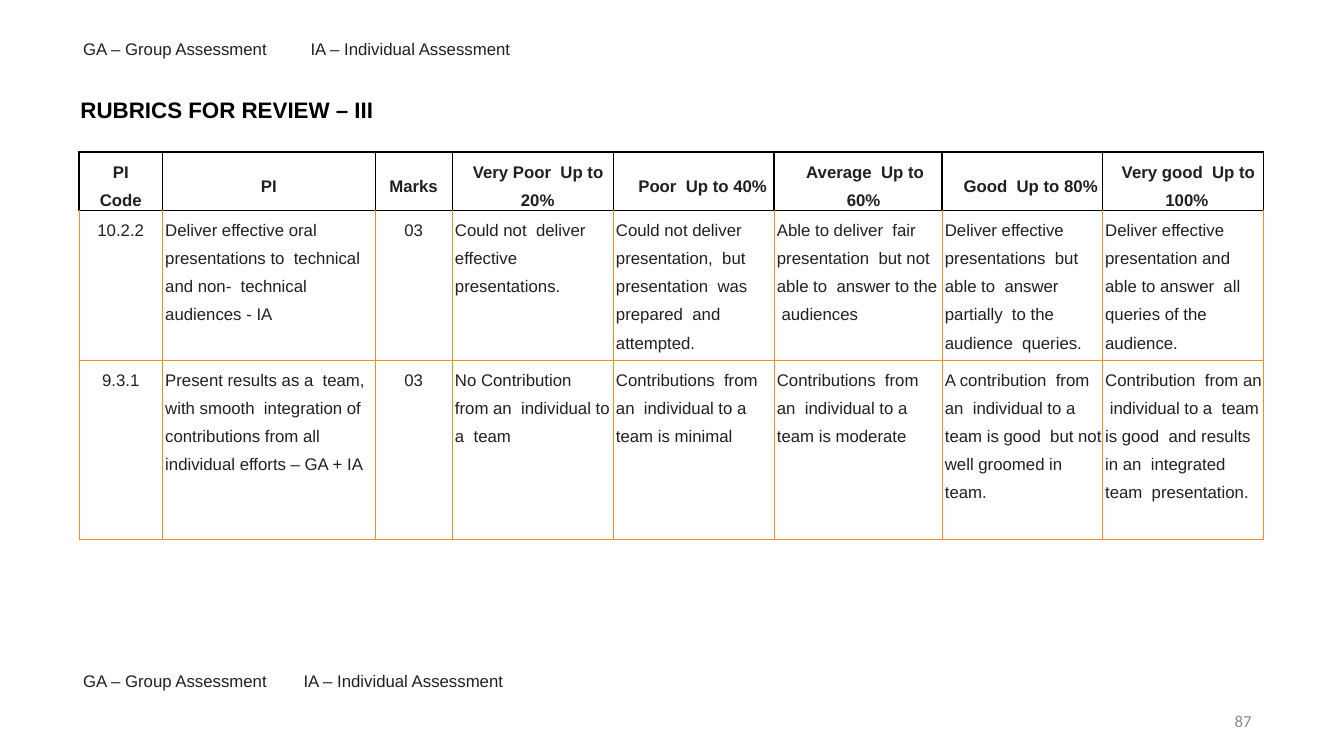
from lxml import etree
from pptx import Presentation
from pptx.dml import color
from pptx.enum import text
from pptx.oxml import ns
from pptx.util import Pt

INK, BLACK, ORANGE, GREY = "231F20", "000000", "F68B1E", "8C8C8C"
CENTER, LEFT, RIGHT = text.PP_ALIGN.CENTER, text.PP_ALIGN.LEFT, text.PP_ALIGN.RIGHT
TOP, MIDDLE = text.MSO_ANCHOR.TOP, text.MSO_ANCHOR.MIDDLE

COLUMN_WIDTHS = [59.5, 152, 55, 115, 115, 120, 114.5, 115]
ROW_HEIGHTS = [42, 107, 128]
HEADINGS = ["PI\nCode", "PI", "Marks", "Very Poor  Up to 20%", "Poor  Up to 40%",
            "Average  Up to 60%", "Good  Up to 80%", "Very good  Up to 100%"]
# Left margin and first-line indent of each heading
HEADING_INDENTS = [(0, 0), (0, 0), (0, 0), (7.2, 0.7), (7.2, 5.8),
                   (7.9, 2.2), (7.2, 5), (5.8, 2.2)]
CRITERIA = [
    ["10.2.2",
     "Deliver effective oral  presentations to  technical and non-  technical audiences - IA",
     "03",
     "Could not  deliver effective  presentations.",
     "Could not deliver  presentation,  but presentation  was prepared  and attempted.",
     "Able to deliver  fair presentation  but not able to  answer to the  audiences",
     "Deliver effective  presentations  but able to  answer partially  to the audience  queries.",
     "Deliver effective  presentation and  able to answer  all queries of the  audience."],
    ["9.3.1",
     "Present results as a  team, with smooth  integration of  contributions from all  "
     "individual efforts – GA + IA",
     "03",
     "No Contribution  from an  individual to a  team",
     "Contributions  from an  individual to a  team is minimal",
     "Contributions  from an  individual to a  team is moderate",
     "A contribution  from an  individual to a  team is good  but not well groomed in  team.",
     "Contribution  from an  individual to a  team is good  and results in an  integrated team  "
     "presentation."],
]


def rgb(hex_code):
    return color.RGBColor.from_string(hex_code)


def write(frame, words, size=12, ink=INK, bold=False, font="Arial", align=LEFT,
          spacing=None, indent=(0, 0)):
    frame.text = words
    for paragraph in frame.paragraphs:
        paragraph.alignment = align
        if spacing:
            paragraph.line_spacing = spacing
        properties = paragraph._p.get_or_add_pPr()
        properties.set("marL", str(Pt(indent[0])))
        properties.set("indent", str(Pt(indent[1])))
        for run in paragraph.runs:
            run.font.name, run.font.size, run.font.bold = font, Pt(size), bold
            run.font.color.rgb = rgb(ink)


def set_margins(holder, top=0):
    holder.margin_left = holder.margin_right = holder.margin_bottom = 0
    holder.margin_top = Pt(top)


def add_title(slide, words):
    title = slide.shapes.title
    title.left, title.top, title.width, title.height = Pt(57.5), Pt(68.5), Pt(410), Pt(20)
    frame = title.text_frame
    set_margins(frame)
    frame.word_wrap = True
    frame.auto_size = text.MSO_AUTO_SIZE.NONE
    frame.vertical_anchor = TOP
    write(frame, words, size=16, ink=BLACK, bold=True)


def add_label(slide, words, left, top, width, height, anchor=TOP, **style):
    frame = slide.shapes.add_textbox(Pt(left), Pt(top), Pt(width), Pt(height)).text_frame
    frame.word_wrap = True
    frame.vertical_anchor = anchor
    set_margins(frame, top=1.2)
    write(frame, words, **style)


def set_borders(cell, edges):
    properties = cell._tc.get_or_add_tcPr()
    for position, (side, (hex_code, width)) in enumerate(edges.items()):
        line = etree.Element(ns.qn("a:" + side), w=str(Pt(width)))
        fill = etree.SubElement(line, ns.qn("a:solidFill"))
        etree.SubElement(fill, ns.qn("a:srgbClr"), val=hex_code)
        properties.insert(position, line)


def fill_cell(cell, words, anchor, top, edges, **style):
    cell.fill.background()
    cell.vertical_anchor = anchor
    set_margins(cell, top)
    write(cell.text_frame, words, spacing=1.5, **style)
    set_borders(cell, edges)


def add_rubric(slide):
    table = slide.shapes.add_table(
        len(ROW_HEIGHTS), len(COLUMN_WIDTHS), Pt(56.5), Pt(108.5),
        Pt(sum(COLUMN_WIDTHS)), Pt(sum(ROW_HEIGHTS))).table
    table.first_row = table.horz_banding = False
    for column, width in zip(table.columns, COLUMN_WIDTHS):
        column.width = Pt(width)
    for row, height in zip(table.rows, ROW_HEIGHTS):
        row.height = Pt(height)

    # Heading row
    black_edges = dict.fromkeys(["lnL", "lnR", "lnT", "lnB"], (BLACK, 1))
    for column, (heading, indent) in enumerate(zip(HEADINGS, HEADING_INDENTS)):
        fill_cell(table.cell(0, column), heading, MIDDLE, 1.4, black_edges,
                  bold=True, align=CENTER, indent=indent)

    # Criteria rows: code and marks are centred
    orange_edges = dict.fromkeys(black_edges, (ORANGE, 0.75))
    for row, criterion in enumerate(CRITERIA, start=1):
        edges = {**orange_edges, "lnT": (BLACK, 1)} if row == 1 else orange_edges
        for column, words in enumerate(criterion):
            centred = column in (0, 2)
            fill_cell(table.cell(row, column), words, TOP, 0.7, edges,
                      align=CENTER if centred else LEFT,
                      indent=(0, 0) if centred else (2, 0))


def main():
    deck = Presentation()
    deck.slide_width, deck.slide_height = Pt(960), Pt(540)
    slide = deck.slides.add_slide(deck.slide_layouts[5])

    add_title(slide, "RUBRICS FOR REVIEW – III")
    add_rubric(slide)

    # Assessment key above and below the table
    for top, individual_left in ((26.5, 220.5), (478, 215.5)):
        add_label(slide, "GA – Group Assessment", 58, top, 185, 11, indent=(1.4, 0))
        add_label(slide, "IA – Individual Assessment", individual_left, top, 202, 11,
                  indent=(1.4, 0))

    # Page number
    add_label(slide, "87", 678, 500, 216, 29, anchor=MIDDLE, ink=GREY,
              font="Calibri", align=RIGHT)
    deck.save("out.pptx")


if __name__ == "__main__":
    main()
